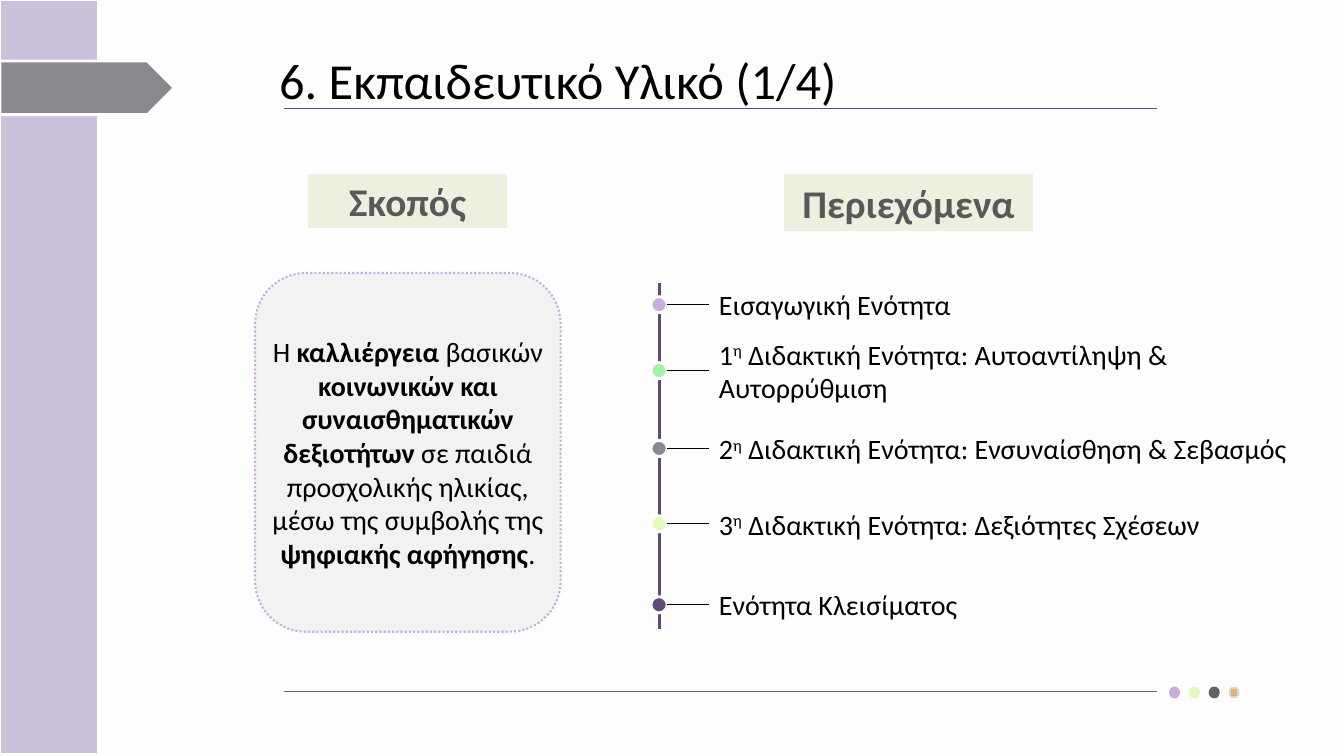
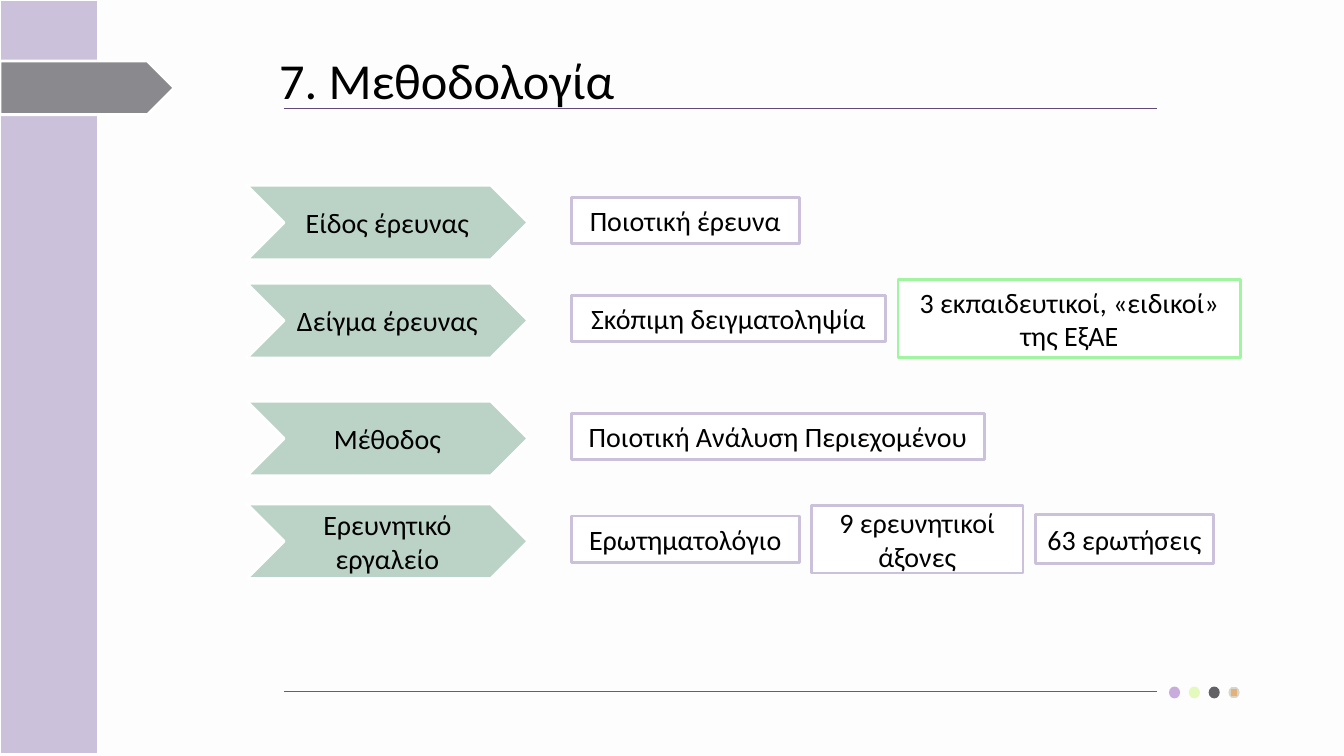
from dataclasses import dataclass

from lxml import etree
from pptx import Presentation
from pptx.dml.color import RGBColor
from pptx.enum.dml import MSO_LINE
from pptx.enum.shapes import MSO_CONNECTOR, MSO_SHAPE
from pptx.enum.text import MSO_ANCHOR, MSO_AUTO_SIZE, PP_ALIGN
from pptx.oxml import parse_xml
from pptx.oxml.ns import nsdecls, qn
from pptx.util import Cm, Pt


@dataclass(frozen=True)
class Theme:
    font: str = "Calibri"
    title_size: int = 36
    heading_size: int = 28
    body_size: int = 20
    background: str = "FDFDFD"
    panel: str = "F2F2F2"
    text: str = "000000"
    heading: str = "595959"
    white: str = "FFFFFF"
    lilac: str = "C9ACDE"
    pale_lilac: str = "CCC1DA"
    purple: str = "604A7B"
    lime: str = "E4FABC"
    green: str = "A1F5A1"
    sage: str = "BBD3C7"
    cream: str = "EBF1DE"
    gray: str = "8A8A8E"
    dark_gray: str = "626266"
    orange: str = "E4B178"
    sand: str = "D8D6CC"


T = Theme()
RULE_LEFT, RULE_RIGHT = 7.16, 29.16


def rgb(color):
    return RGBColor.from_string(color)


# Text
def style_run(r, size, color=T.text, bold=False):
    r.font.name = T.font
    r.font.size = Pt(size)
    r.font.bold = bold
    r.font.color.rgb = rgb(color)


def write(tf, parts, size=T.body_size, color=T.text, align=PP_ALIGN.CENTER):
    """Fill a frame with (text, style) parts; style is "", "bold" or "super"."""
    tf.word_wrap = True
    tf.vertical_anchor = MSO_ANCHOR.MIDDLE
    p = tf.paragraphs[0]
    p.alignment = align
    for text, style in parts:
        r = p.add_run()
        r.text = text
        style_run(r, size, color, style == "bold")
        if style == "super":
            r.font.size = Pt(size)
            r._r.get_or_add_rPr().set("baseline", "30000")


def add_label(s, parts, left, middle, width, height=1.12):
    tf = s.shapes.add_textbox(Cm(left), Cm(middle - height / 2),
                              Cm(width), Cm(height)).text_frame
    write(tf, parts, align=PP_ALIGN.LEFT)
    tf.word_wrap = False


# Shapes and lines
def add_shape(shapes, kind, left, top, width, height, fill, line=None, weight=2):
    sp = shapes.add_shape(kind, Cm(left), Cm(top), Cm(width), Cm(height))
    sp.shadow.inherit = False
    sp.fill.solid()
    sp.fill.fore_color.rgb = rgb(fill)
    if line:
        sp.line.color.rgb = rgb(line)
        sp.line.width = Pt(weight)
    else:
        sp.line.fill.background()
    return sp


def add_line(s, x1, y1, x2, y2, color, weight):
    line = s.shapes.add_connector(MSO_CONNECTOR.STRAIGHT,
                                  Cm(x1), Cm(y1), Cm(x2), Cm(y2))
    line.line.color.rgb = rgb(color)
    line.line.width = Pt(weight)
    etree.SubElement(line._element.spPr, qn("a:effectLst"))


def add_heading(s, text, left, width, height):
    sp = add_shape(s.shapes, MSO_SHAPE.FLOWCHART_PROCESS, left, 4.39,
                   width, height, T.cream)
    write(sp.text_frame, [(text, "bold")], T.heading_size, T.heading)


def add_box(s, kind, text, left, middle, width, height, fill, line):
    sp = add_shape(s.shapes, kind, left, middle - height / 2,
                   width, height, fill, line)
    write(sp.text_frame, [(text, "")])


# Shared frame: background, title, rules, dots, side band
def add_footer_dots(s):
    group = s.shapes.add_group_shape()
    for i, color in enumerate((T.lilac, T.lime, T.dark_gray, T.orange)):
        dot = add_shape(group.shapes, MSO_SHAPE.OVAL,
                        29.46 + 0.5 * i, 17.3, 0.28, 0.3, color)
    # The last dot has a sand rim around its orange centre
    dot.fill.gradient()
    stops = zip(dot.fill.gradient_stops, (T.orange, T.sand), (0.57, 0.62))
    for stop, color, position in stops:
        stop.color.rgb = rgb(color)
        stop.position = position
    grad = dot._element.spPr.find(qn("a:gradFill"))
    grad.replace(grad.find(qn("a:lin")), parse_xml(
        f'<a:path {nsdecls("a")} path="shape">'
        '<a:fillToRect l="50000" t="50000" r="50000" b="50000"/></a:path>'))


def new_slide(prs, title):
    s = prs.slides.add_slide(prs.slide_layouts[5])
    s.background.fill.solid()
    s.background.fill.fore_color.rgb = rgb(T.background)

    sp = s.shapes.title
    sp.left, sp.top, sp.width, sp.height = Cm(6.78), Cm(1.09), Cm(21.95), Cm(1.8)
    tf = sp.text_frame
    tf.text = title
    tf.auto_size = MSO_AUTO_SIZE.NONE
    tf.vertical_anchor = MSO_ANCHOR.MIDDLE
    tf.paragraphs[0].alignment = PP_ALIGN.LEFT
    style_run(tf.paragraphs[0].runs[0], T.title_size)

    add_line(s, RULE_LEFT, 2.74, RULE_RIGHT, 2.74, T.purple, 0.75)
    add_line(s, RULE_LEFT, 17.42, RULE_RIGHT, 17.42, T.dark_gray, 1)
    add_footer_dots(s)
    add_shape(s.shapes, MSO_SHAPE.RECTANGLE, 0, 0, 2.49, 19, T.pale_lilac, T.white)
    add_shape(s.shapes, MSO_SHAPE.PENTAGON, 0, 1.54, 4.39, 1.35, T.gray, T.white)
    return s


# Slide 1: purpose and contents
def add_purpose(s):
    add_heading(s, "Σκοπός", 7.77, 5, 1.35)
    sp = add_shape(s.shapes, MSO_SHAPE.ROUNDED_RECTANGLE, 6.43, 6.88, 7.7, 9.04,
                   T.panel, T.lilac, 1.5)
    sp.line.dash_style = MSO_LINE.ROUND_DOT
    tf = sp.text_frame
    tf.margin_left = tf.margin_right = 0
    write(tf, [
        ("H ", ""), ("καλλιέργεια", "bold"), (" βασικών ", ""),
        ("κοινωνικών και συναισθηματικών δεξιοτήτων ", "bold"),
        ("σε παιδιά προσχολικής ηλικίας, μέσω της συμβολής της ", ""),
        ("ψηφιακής αφήγησης", "bold"), (".", ""),
    ])


def add_contents(s):
    add_heading(s, "Περιεχόμενα", 19.76, 6.27, 1.42)
    axis, dot = 16.61, 0.41
    add_line(s, axis, 7.14, axis, 15.85, T.purple, 2.25)

    def unit(number, subject):
        return [(number, ""), ("η", "super"), (f" Διδακτική Ενότητα: {subject}", "")]

    entries = [
        (7.68, T.lilac, [("Εισαγωγική Ενότητα", "")]),
        (9.34, T.green, unit("1", "Αυτοαντίληψη & Αυτορρύθμιση")),
        (11.3, T.gray, unit("2", "Ενσυναίσθηση & Σεβασμός")),
        (13.2, T.lime, unit("3", "Δεξιότητες Σχέσεων")),
        (15.24, T.purple, [("Ενότητα Κλεισίματος", "")]),
    ]
    for y, color, parts in entries:
        add_shape(s.shapes, MSO_SHAPE.OVAL, axis - dot / 2, y - dot / 2,
                  dot, dot, color, T.white)
        add_line(s, axis + dot / 2, y, 17.87, y, T.text, 0.75)
        add_label(s, parts, 17.87, y, 15.9)


# Slide 2: one arrow per row, followed by its answers
def add_methodology(s):
    gap = 0.31
    rows = [
        (5.61, "Είδος έρευνας",
         [("Ποιοτική έρευνα", 5.74, 1.17, T.pale_lilac)]),
        (8.08, "Δείγμα έρευνας",
         [("Σκόπιμη δειγματοληψία", 7.92, 1.17, T.pale_lilac),
          ("3 εκπαιδευτικοί, «ειδικοί» της ΕξΑΕ", 8.64, 1.96, T.green)]),
        (11.05, "Μέθοδος",
         [("Ποιοτική Ανάλυση Περιεχομένου", 10.41, 1.17, T.pale_lilac)]),
        (13.64, "Ερευνητικό εργαλείο",
         [("Ερωτηματολόγιο", 5.74, 1.17, T.pale_lilac),
          ("9 ερευνητικοί άξονες", 5.33, 1.7, T.pale_lilac),
          ("63 ερωτήσεις", 4.5, 1.24, T.pale_lilac)]),
    ]
    for y, name, answers in rows:
        add_box(s, MSO_SHAPE.CHEVRON, name, 6.22, y, 7.09, 1.88, T.sage, T.white)
        left = 14.4
        for text, width, height, line in answers:
            add_box(s, MSO_SHAPE.FLOWCHART_PROCESS, text, left, y - 0.05,
                    width, height, T.white, line)
            left += width + gap


def main():
    prs = Presentation()
    prs.slide_width, prs.slide_height = Cm(33.87), Cm(19.05)

    s = new_slide(prs, "6. Εκπαιδευτικό Υλικό (1/4)")
    add_purpose(s)
    add_contents(s)

    s = new_slide(prs, "7. Μεθοδολογία")
    add_methodology(s)

    prs.save("out.pptx")


if __name__ == "__main__":
    main()
